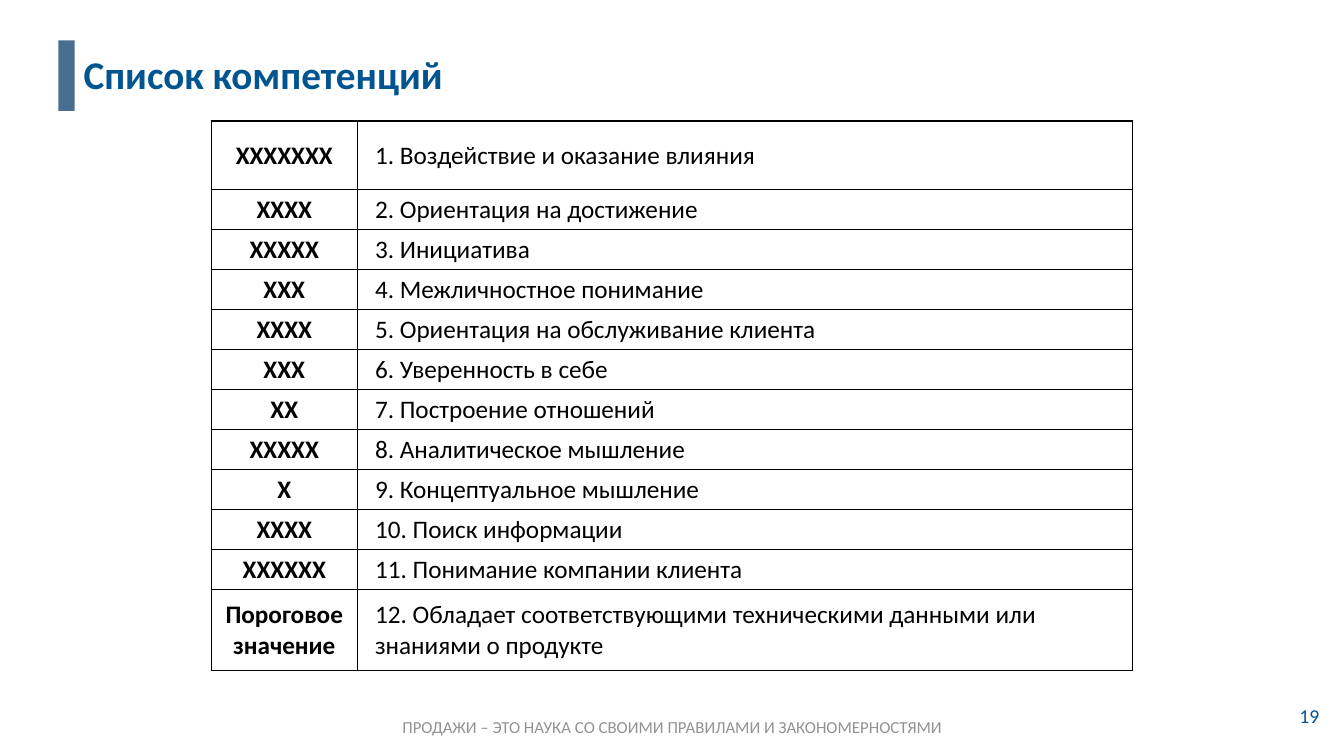
"""Build the slide with the weighted list of sales competencies."""
from lxml.etree import SubElement
from pptx import Presentation
from pptx.dml.color import RGBColor
from pptx.enum.shapes import MSO_SHAPE
from pptx.enum.text import MSO_ANCHOR as ANCHOR, PP_ALIGN as ALIGN
from pptx.oxml.ns import qn
from pptx.util import Inches, Pt

HEADING = "Список компетенций"
MOTTO = "ПРОДАЖИ – ЭТО НАУКА СО СВОИМИ ПРАВИЛАМИ И ЗАКОНОМЕРНОСТЯМИ"
PAGE = "19"
COMPETENCIES = [
    ("XXXXXXX", ["Воздействие и оказание влияния"]),
    ("XXXX", ["Ориентация на достижение"]),
    ("XXXXX", ["Инициатива"]),
    ("XXX", ["Межличностное понимание"]),
    ("XXXX", ["Ориентация на обслуживание клиента"]),
    ("XXX", ["Уверенность в себе"]),
    ("XX", ["Построение отношений"]),
    ("XXXXX", ["Аналитическое мышление"]),
    ("X", ["Концептуальное мышление"]),
    ("XXXX", ["Поиск информации"]),
    ("XXXXXX", ["Понимание компании клиента"]),
    ("Пороговое значение", ["Обладает соответствующими техническими данными или",
                            "знаниями о продукте"]),
]

FONT = "Calibri"
BLUE = RGBColor(0x00, 0x54, 0x90)
STEEL = RGBColor(0x49, 0x6F, 0x90)
GRAY = RGBColor(0x92, 0x92, 0x92)
BLACK = RGBColor(0, 0, 0)

TABLE_LEFT, TABLE_TOP, TABLE_HEIGHT = 2.1, 1.2, 5.45
COLUMN_WIDTHS = (1.44, 7.69)
FIRST_HEIGHT, LAST_HEIGHT = 0.68, 0.8
INNER_LINE, OUTER_LINE = 0.5, 1


def write(frame, lines, size, color, bold=False, align=ALIGN.LEFT):
    for index, line in enumerate(lines):
        paragraph = frame.paragraphs[0] if index == 0 else frame.add_paragraph()
        paragraph.alignment = align
        run = paragraph.add_run()
        run.text = line
        run.font.name, run.font.size, run.font.bold = FONT, Pt(size), bold
        run.font.color.rgb = color


def add_label(slide, box, text, size, color, inset=(0.1, 0.05), **style):
    frame = slide.shapes.add_textbox(*map(Inches, box)).text_frame
    frame.margin_left = frame.margin_right = Inches(inset[0])
    frame.margin_top = frame.margin_bottom = Inches(inset[1])
    frame.word_wrap = True
    write(frame, [text], size, color, **style)
    return frame


def draw_borders(cell, widths):
    properties = cell._tc.get_or_add_tcPr()
    for side, width in zip("LRTB", widths):
        line = SubElement(properties, qn(f"a:ln{side}"), w=str(Pt(width)))
        fill = SubElement(line, qn("a:solidFill"))
        SubElement(fill, qn("a:srgbClr"), val=str(BLACK))


def fill_cell(cell, lines, left_margin, widths, **style):
    cell.margin_left = Inches(left_margin)
    cell.margin_right = cell.margin_top = Inches(0.01)
    cell.margin_bottom = 0
    cell.vertical_anchor = ANCHOR.MIDDLE
    write(cell.text_frame, lines, 18, BLACK, **style)
    draw_borders(cell, widths)
    cell.fill.background()


def add_competencies(slide):
    count = len(COMPETENCIES)
    middle_height = (TABLE_HEIGHT - FIRST_HEIGHT - LAST_HEIGHT) / (count - 2)
    heights = [FIRST_HEIGHT] + [middle_height] * (count - 2) + [LAST_HEIGHT]
    table = slide.shapes.add_table(
        count, 2, Inches(TABLE_LEFT), Inches(TABLE_TOP),
        Inches(sum(COLUMN_WIDTHS)), Inches(TABLE_HEIGHT)).table
    table.first_row = table.horz_banding = False
    for column, width in zip(table.columns, COLUMN_WIDTHS):
        column.width = Inches(width)
    for index, (weight, lines) in enumerate(COMPETENCIES):
        table.rows[index].height = Inches(heights[index])
        top = OUTER_LINE if index == 0 else INNER_LINE
        bottom = OUTER_LINE if index == count - 1 else INNER_LINE
        numbered = [f"{index + 1}. {lines[0]}"] + lines[1:]
        fill_cell(table.cell(index, 0), [weight], 0.01,
                  (OUTER_LINE, INNER_LINE, top, bottom), bold=True, align=ALIGN.CENTER)
        fill_cell(table.cell(index, 1), numbered, 0.18,
                  (INNER_LINE, OUTER_LINE, top, bottom))


def main():
    deck = Presentation()
    deck.slide_width, deck.slide_height = Inches(13.33), Inches(7.5)
    slide = deck.slides.add_slide(deck.slide_layouts[6])

    motto = add_label(slide, (3.8, 7.06, 5.74, 0.3), MOTTO, 12, GRAY, align=ALIGN.CENTER)
    motto.word_wrap = False

    accent = slide.shapes.add_shape(
        MSO_SHAPE.RECTANGLE, *map(Inches, (0.58, 0.4, 0.16, 0.7)))
    accent.shadow.inherit = False
    accent.fill.solid()
    accent.fill.fore_color.rgb = STEEL
    accent.line.fill.background()

    heading = add_label(slide, (0.83, 0.55, 10, 0.42), HEADING, 28, BLUE,
                        inset=(0, 0), bold=True)
    heading.paragraphs[0].line_spacing = 0.9

    add_competencies(slide)

    page = add_label(slide, (12.79, 6.88, 0.44, 0.44), PAGE, 14, BLUE)
    page.vertical_anchor = ANCHOR.MIDDLE
    deck.save("out.pptx")


if __name__ == "__main__":
    main()
